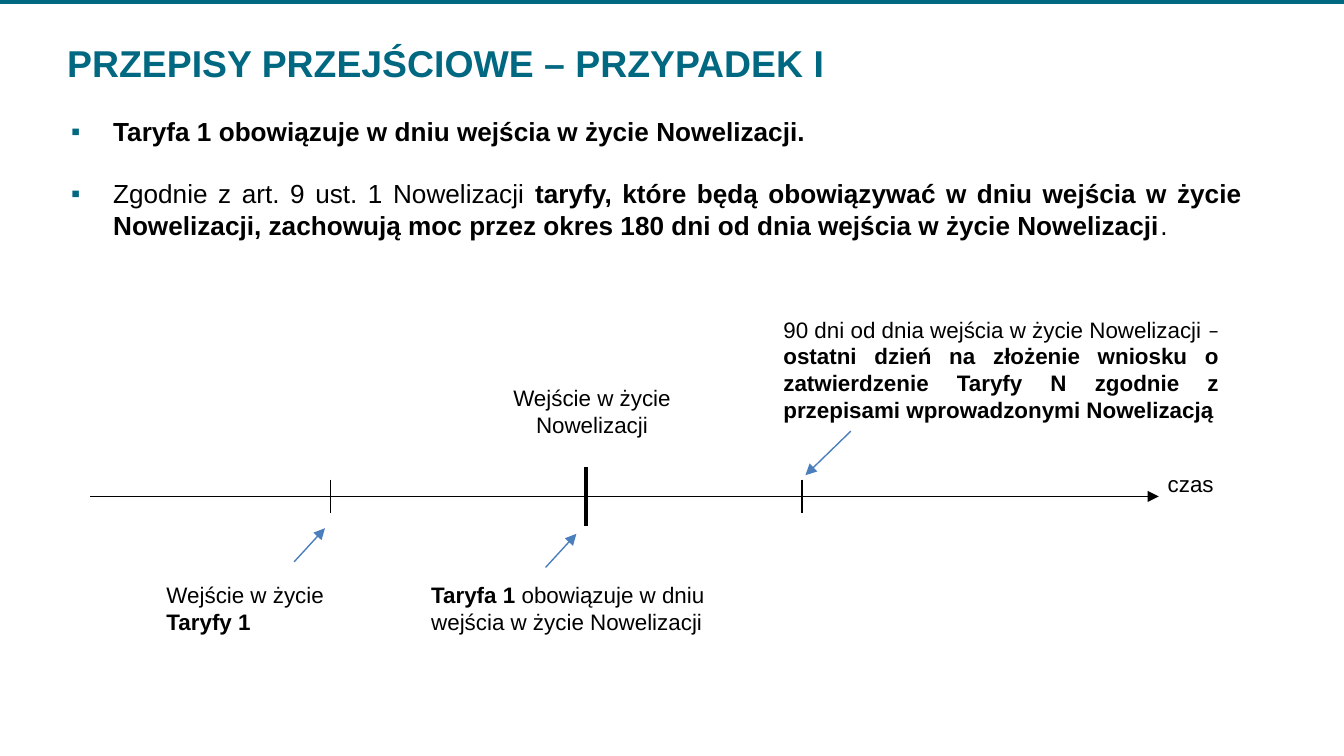
import pptx
import pptx.dml.color
import pptx.enum.shapes
import pptx.enum.text
import pptx.oxml.ns
import pptx.util
from dataclasses import dataclass
from lxml import etree

Pt = pptx.util.Pt
RGB = pptx.dml.color.RGBColor.from_string
ALIGN = pptx.enum.text.PP_ALIGN
SHAPES = pptx.enum.shapes.MSO_SHAPE
qn = pptx.oxml.ns.qn


@dataclass(frozen=True)
class Theme:
    accent: str = "006881"
    pointer: str = "4B7EBC"
    ink: str = "000000"
    paper: str = "FFFFFF"
    font: str = "Arial"
    dash_font: str = "Calibri"
    title_size: int = 20
    body_size: int = 14
    label_size: int = 12


class Deck:
    def __init__(self, theme, width, height):
        self.theme = theme
        self.prs = pptx.Presentation()
        self.prs.slide_width = Pt(width)
        self.prs.slide_height = Pt(height)
        self.s = self.prs.slides.add_slide(self.prs.slide_layouts[5])

    def add_runs(self, p, runs, size, color, align=ALIGN.LEFT):
        """Add (text, bold[, font]) runs to a paragraph."""
        p.alignment = align
        for text, bold, *font in runs:
            r = p.add_run()
            r.text = text
            r.font.name = font[0] if font else self.theme.font
            r.font.size = Pt(size)
            r.font.bold = bold
            r.font.color.rgb = RGB(color)

    def frame(self, sp, insets):
        """Make the shape's text wrap from the top, inside (side, top) insets."""
        tf = sp.text_frame
        tf.word_wrap = True
        tf.auto_size = pptx.enum.text.MSO_AUTO_SIZE.NONE
        tf.vertical_anchor = pptx.enum.text.MSO_ANCHOR.TOP
        tf.margin_left = tf.margin_right = Pt(insets[0])
        tf.margin_top = tf.margin_bottom = Pt(insets[1])
        return tf

    def title(self, text, x, y, w, h):
        sp = self.s.shapes.title
        sp.left, sp.top, sp.width, sp.height = Pt(x), Pt(y), Pt(w), Pt(h)
        p = self.frame(sp, (0, 0)).paragraphs[0]
        self.add_runs(p, [(text, True)], self.theme.title_size, self.theme.accent)

    def rect(self, x, y, w, h, fill, line_width=0):
        sp = self.s.shapes.add_shape(SHAPES.RECTANGLE, Pt(x), Pt(y), Pt(w), Pt(h))
        sp.shadow.inherit = False
        sp.fill.solid()
        sp.fill.fore_color.rgb = RGB(fill)
        if line_width:
            sp.line.color.rgb = RGB(fill)
            sp.line.width = Pt(line_width)
        else:
            sp.line.fill.background()
        return sp

    def label(self, runs, x, y, w, h, align=ALIGN.LEFT):
        sp = self.rect(x, y, w, h, self.theme.paper)
        p = self.frame(sp, (7.2, 3.6)).paragraphs[0]
        self.add_runs(p, runs, self.theme.label_size, self.theme.ink, align)

    def bullets(self, items, x, y, w, h, indent, gap):
        sp = self.s.shapes.add_textbox(Pt(x), Pt(y), Pt(w), Pt(h))
        tf = self.frame(sp, (7.2, 5.6))
        for i, runs in enumerate(items):
            p = tf.add_paragraph() if i else tf.paragraphs[0]
            p.space_before = Pt(gap if i else 0)
            self.add_runs(p, runs, self.theme.body_size, self.theme.ink, ALIGN.JUSTIFY)
            pPr = p._p.get_or_add_pPr()
            pPr.set("marL", str(Pt(indent)))
            pPr.set("indent", str(-Pt(indent)))
            color = etree.SubElement(pPr, qn("a:buClr"))
            etree.SubElement(color, qn("a:srgbClr"), val=self.theme.accent)
            etree.SubElement(pPr, qn("a:buFont"), typeface=self.theme.font)
            etree.SubElement(pPr, qn("a:buChar"), char="▪")

    def line(self, x1, y1, x2, y2, color, width, arrow=False):
        cxn = self.s.shapes.add_connector(
            pptx.enum.shapes.MSO_CONNECTOR.STRAIGHT, Pt(x1), Pt(y1), Pt(x2), Pt(y2))
        cxn.line.color.rgb = RGB(color)
        cxn.line.width = Pt(width)
        spPr = cxn._element.spPr
        if arrow:
            etree.SubElement(spPr.find(qn("a:ln")), qn("a:tailEnd"), type="triangle")
        etree.SubElement(spPr, qn("a:effectLst"))


def main():
    theme = Theme()
    deck = Deck(theme, 720, 405)
    deck.rect(0, 0, 720, 1.4, theme.accent, 2)
    deck.title("PRZEPISY PRZEJŚCIOWE – PRZYPADEK I", 36, 21.6, 641.5, 50.4)
    deck.bullets([
        [("Taryfa 1 obowiązuje w dniu wejścia w życie Nowelizacji.", True)],
        [("Zgodnie z art. 9 ust. 1 Nowelizacji ", False),
         ("taryfy, które będą obowiązywać w dniu wejścia w życie Nowelizacji, "
          "zachowują moc przez okres 180 dni od dnia wejścia w życie Nowelizacji", True),
         (".", False)],
    ], 31, 56.2, 641.5, 108.7, indent=22.5, gap=16.5)

    deck.label([("czas", False)], 618.5, 248.4, 57.6, 18)
    deck.label([("Taryfa 1", True), (" obowiązuje w dniu wejścia w życie Nowelizacji", False)],
               223.9, 308, 193, 36)
    deck.label([("Wejście w życie Nowelizacji", False)], 259.2, 202.3, 116, 36, ALIGN.CENTER)
    deck.label([("Wejście w życie ", False), ("Taryfy 1", True)], 82.1, 308, 109.4, 36)
    deck.label([("90 dni od dnia wejścia w życie Nowelizacji ", False),
                ("– ", False, theme.dash_font),
                ("ostatni dzień na złożenie wniosku o zatwierdzenie Taryfy N zgodnie z "
                 "przepisami wprowadzonymi Nowelizacją", True)],
               412.6, 165.6, 247.7, 65.5, ALIGN.JUSTIFY)

    axis_y = 266
    deck.line(48.2, axis_y, 620.8, axis_y, theme.ink, 1, arrow=True)
    for x, half, width in [(177.1, 9, 1), (313.9, 15.8, 2.25), (429.7, 9, 1)]:
        deck.line(x, axis_y - half, x, axis_y + half, theme.ink, width)
    for ends in [(157.6, 301, 174.1, 283), (292.3, 304, 308.8, 286),
                 (455.8, 231, 431.5, 254.6)]:
        deck.line(*ends, theme.pointer, 0.75, arrow=True)
    deck.prs.save("out.pptx")


if __name__ == "__main__":
    main()
